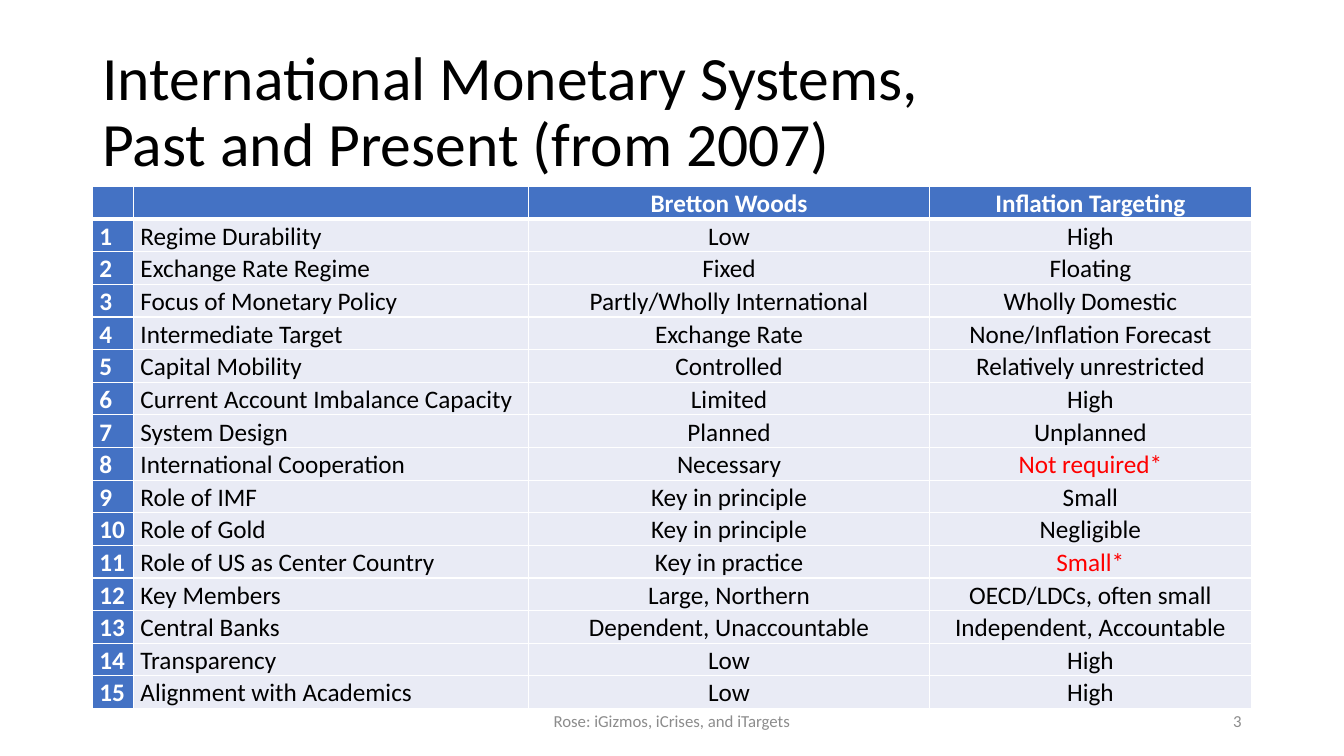
from dataclasses import dataclass

from lxml.etree import SubElement
from pptx import Presentation
from pptx.dml.color import RGBColor
from pptx.enum.text import MSO_ANCHOR, PP_ALIGN
from pptx.oxml.ns import qn
from pptx.util import Inches, Pt


@dataclass(frozen=True)
class Theme:
    font: str = "Calibri"
    ink: str = "000000"
    white: str = "FFFFFF"
    header: str = "4472C4"
    body: str = "E9EBF5"
    alert: str = "FF0000"
    muted: str = "8C8C8C"
    title_size: int = 44
    table_size: int = 18
    footer_size: int = 12


THEME = Theme()
WIDTH, HEIGHT = Inches(13.33), Inches(7.5)

# Places as percentages of the slide: left, top, width, height
TITLE_AREA = (6.88, 5.33, 86.25, 19.33)
TABLE_AREA = (6.88, 24.67, 86.25, 69.1)
FOOTER_AREA = (33.12, 92.67, 33.75, 5.33)
NUMBER_AREA = (70.62, 92.67, 22.5, 5.33)
COLUMN_SHARES = (3.54, 34.11, 34.54, 27.81)

HEADINGS = ("", "", "Bretton Woods", "Inflation Targeting")
SYSTEMS = (
    ("Regime Durability", "Low", "High"),
    ("Exchange Rate Regime", "Fixed", "Floating"),
    ("Focus of Monetary Policy", "Partly/Wholly International", "Wholly Domestic"),
    ("Intermediate Target", "Exchange Rate", "None/Inflation Forecast"),
    ("Capital Mobility", "Controlled", "Relatively unrestricted"),
    ("Current Account Imbalance Capacity", "Limited", "High"),
    ("System Design", "Planned", "Unplanned"),
    ("International Cooperation", "Necessary", "Not required*"),
    ("Role of IMF", "Key in principle", "Small"),
    ("Role of Gold", "Key in principle", "Negligible"),
    ("Role of US as Center Country", "Key in practice", "Small*"),
    ("Key Members", "Large, Northern", "OECD/LDCs, often small"),
    ("Central Banks", "Dependent, Unaccountable", "Independent, Accountable"),
    ("Transparency", "Low", "High"),
    ("Alignment with Academics", "Low", "High"),
)


def place(area):
    """Turn percentages of the slide into lengths."""
    return [int(share * side / 100)
            for share, side in zip(area, (WIDTH, HEIGHT, WIDTH, HEIGHT))]


def write(frame, text, size, color=THEME.ink, bold=False,
          align=PP_ALIGN.LEFT, spacing=1.0):
    para = frame.paragraphs[0]
    para.text = text
    para.alignment = align
    para.line_spacing = spacing
    for span in para.runs:
        span.font.name = THEME.font
        span.font.size = Pt(size)
        span.font.bold = bold
        span.font.color.rgb = RGBColor.from_string(color)


def add_text(page, area, text, size, **text_format):
    box = page.shapes.add_textbox(*place(area))
    box.text_frame.word_wrap = True
    box.text_frame.vertical_anchor = MSO_ANCHOR.MIDDLE
    write(box.text_frame, text, size, **text_format)


def add_borders(cell, bottom_width):
    properties = cell._tc.get_or_add_tcPr()
    widths = {"a:lnL": 1, "a:lnR": 1, "a:lnT": 1, "a:lnB": bottom_width}
    for tag, width in widths.items():
        line = SubElement(properties, qn(tag), w=str(Pt(width)))
        fill = SubElement(line, qn("a:solidFill"))
        SubElement(fill, qn("a:srgbClr"), val=THEME.white)


def style_cell(cell, text, row, column):
    strong = row == 0 or column == 0
    color = THEME.white if strong else THEME.alert if text.endswith("*") else THEME.ink
    cell.margin_left = cell.margin_right = Inches(0.07)
    cell.margin_top = cell.margin_bottom = 0
    # Borders come before the fill in the cell properties
    add_borders(cell, bottom_width=3 if row == 0 else 1)
    cell.fill.solid()
    cell.fill.fore_color.rgb = RGBColor.from_string(THEME.header if strong else THEME.body)
    write(cell.text_frame, text, THEME.table_size, color=color, bold=strong,
          align=PP_ALIGN.CENTER if column > 1 else PP_ALIGN.LEFT, spacing=1.07)


def add_comparison(page):
    rows = [HEADINGS] + [(str(number), *system)
                         for number, system in enumerate(SYSTEMS, 1)]
    left, top, width, height = place(TABLE_AREA)
    table = page.shapes.add_table(len(rows), len(HEADINGS), left, top, width, height).table
    for column, share in zip(table.columns, COLUMN_SHARES):
        column.width = int(width * share / 100)
    for row, texts in enumerate(rows):
        for column, text in enumerate(texts):
            style_cell(table.cell(row, column), text, row, column)


def main():
    deck = Presentation()
    deck.slide_width, deck.slide_height = WIDTH, HEIGHT
    page = deck.slides.add_slide(deck.slide_layouts[6])

    # Title
    add_text(page, TITLE_AREA,
             "International Monetary Systems,\vPast and Present (from 2007)",
             THEME.title_size, spacing=0.9)

    # Comparison of the two systems
    add_comparison(page)

    # Footer and page number
    add_text(page, FOOTER_AREA, "Rose: iGizmos, iCrises, and iTargets",
             THEME.footer_size, color=THEME.muted, align=PP_ALIGN.CENTER)
    add_text(page, NUMBER_AREA, "3",
             THEME.footer_size, color=THEME.muted, align=PP_ALIGN.RIGHT)

    deck.save("out.pptx")


if __name__ == "__main__":
    main()
